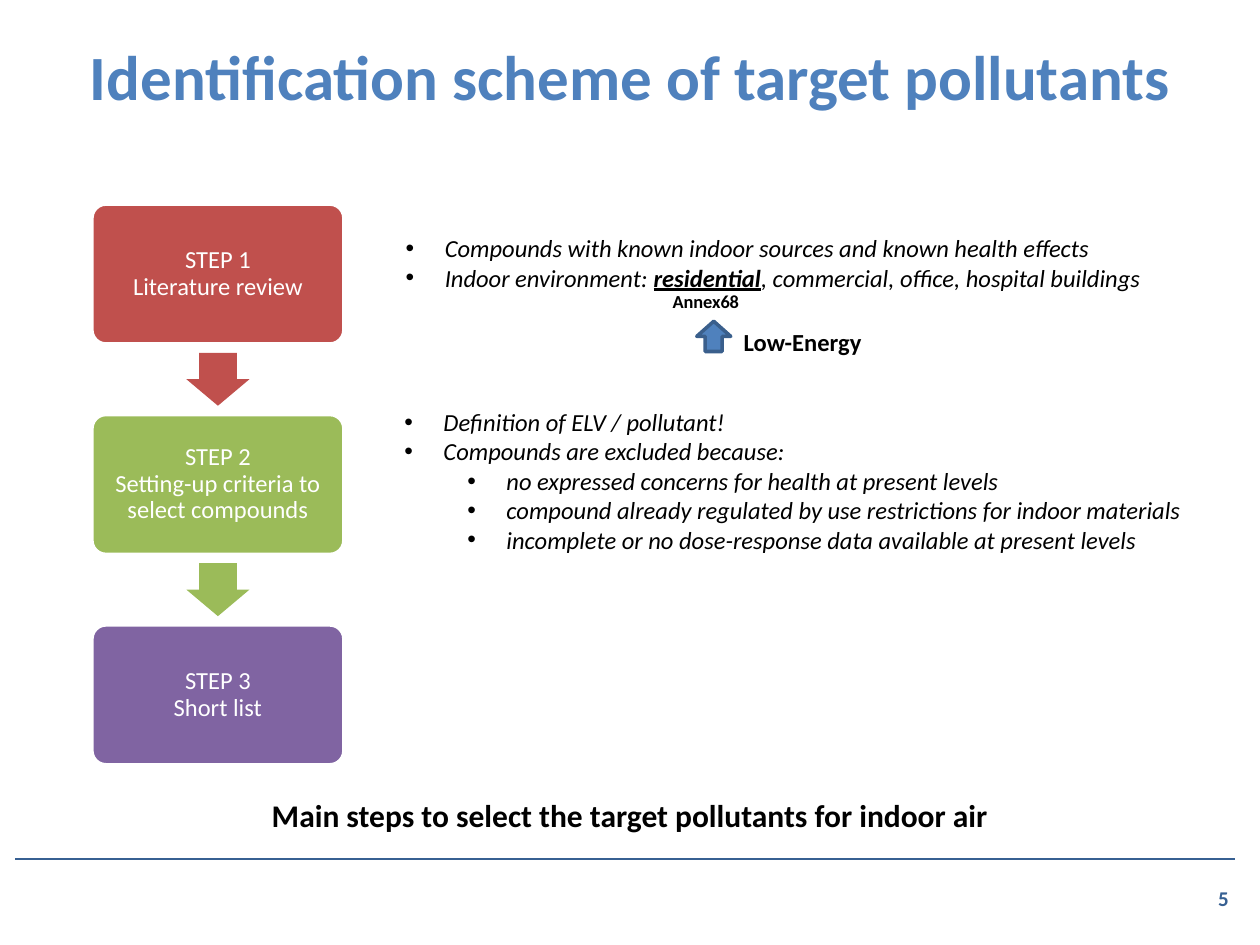
from pptx import Presentation
from pptx.dml.color import RGBColor
from pptx.enum.shapes import MSO_CONNECTOR as Connector, MSO_SHAPE as Preset
from pptx.enum.text import MSO_ANCHOR as Anchor, MSO_AUTO_SIZE as AutoSize, PP_ALIGN as Align
from pptx.oxml.xmlchemy import OxmlElement
from pptx.util import Inches, Pt

FONT = "Calibri"
BLUE, NAVY, BLACK, WHITE = "4F81BD", "376092", "000000", "FFFFFF"
STEPS = [
    ("STEP 1\vLiterature review", "C0504D"),
    ("STEP 2\vSetting-up criteria to select compounds", "9BBB59"),
    ("STEP 3\vShort list", "8064A2"),
]
# Each item is (level, list of (text, emphasised))
REVIEW_ITEMS = [
    (0, [("Compounds with known indoor sources and known health effects", False)]),
    (0, [("Indoor environment: ", False), ("residential", True),
         (", commercial, office, hospital buildings", False)]),
]
CRITERIA_ITEMS = [
    (0, [("Definition of ELV / pollutant!", False)]),
    (0, [("Compounds are excluded because:", False)]),
    (1, [("no expressed concerns for health at present levels", False)]),
    (1, [("compound already regulated by use restrictions for indoor materials", False)]),
    (1, [("incomplete or no dose-response data available at present levels", False)]),
]


def color(hex_string):
    return RGBColor.from_string(hex_string)


def format_run(run, size, hex_string, bold=False, italic=False):
    font = run.font
    font.name, font.size, font.bold, font.italic = FONT, Pt(size), bold, italic
    font.color.rgb = color(hex_string)


def place(shape, left, top, width, height):
    shape.left, shape.top = Inches(left), Inches(top)
    shape.width, shape.height = Inches(width), Inches(height)


def set_text(shape, text, size, hex_string, bold=False, align=Align.CENTER, anchor=Anchor.TOP):
    frame = shape.text_frame
    frame.word_wrap = True
    frame.auto_size = AutoSize.NONE
    frame.vertical_anchor = anchor
    frame.text = text
    for paragraph in frame.paragraphs:
        paragraph.alignment = align
        for run in paragraph.runs:
            format_run(run, size, hex_string, bold)


def add_label(slide, box, text, size, hex_string=BLACK, **options):
    label = slide.shapes.add_textbox(*map(Inches, box))
    set_text(label, text, size, hex_string, bold=True, **options)


def add_preset(slide, preset, box, fill, line=None, adjustments=()):
    shape = slide.shapes.add_shape(preset, *map(Inches, box))
    shape.shadow.inherit = False
    shape.fill.solid()
    shape.fill.fore_color.rgb = color(fill)
    if line:
        shape.line.color.rgb = color(line)
        shape.line.width = Pt(2)
    else:
        shape.line.fill.background()
    for index, value in enumerate(adjustments):
        shape.adjustments[index] = value
    return shape


def set_bullet(paragraph, indent, hanging):
    properties = paragraph._p.get_or_add_pPr()
    properties.set("marL", str(Inches(indent)))
    properties.set("indent", str(-Inches(hanging)))
    for tag, name, value in (("a:buFont", "typeface", "Arial"), ("a:buChar", "char", "•")):
        element = OxmlElement(tag)
        element.set(name, value)
        properties.append(element)


def fill_list(placeholder, box, items):
    place(placeholder, *box)
    frame = placeholder.text_frame
    frame.auto_size = AutoSize.NONE
    for index, (level, parts) in enumerate(items):
        paragraph = frame.add_paragraph() if index else frame.paragraphs[0]
        paragraph.level = level
        paragraph.space_before = Pt(0)
        set_bullet(paragraph, 0.31 + 0.5 * level, 0.31)
        for text, emphasised in parts:
            run = paragraph.add_run()
            run.text = text
            format_run(run, 14, BLACK, bold=emphasised, italic=True)
            run.font.underline = emphasised


def add_steps(slide, left, top, width, height, pitch):
    """Column of step boxes, each joined to the next by a down arrow."""
    arrow_width, arrow_height = 0.5, 0.42
    for index, (text, fill) in enumerate(STEPS):
        step_top = top + index * pitch
        step = add_preset(slide, Preset.ROUNDED_RECTANGLE,
                          (left, step_top, width, height), fill, WHITE, [0.1])
        set_text(step, text, 14, WHITE, anchor=Anchor.MIDDLE)
        step.text_frame.paragraphs[0].line_spacing = 0.9
        if index < len(STEPS) - 1:
            gap_middle = step_top + (height + pitch) / 2
            add_preset(slide, Preset.DOWN_ARROW,
                       (left + (width - arrow_width) / 2, gap_middle - arrow_height / 2,
                        arrow_width, arrow_height), fill, adjustments=[0.6, 0.5])


def add_annex_note(slide, left, top):
    """Remark below the word 'residential'."""
    add_label(slide, (left, top, 0.74, 0.28), "Annex68", 10.5, align=Align.LEFT)
    add_preset(slide, Preset.UP_ARROW, (left + 0.29, top + 0.3, 0.27, 0.24), BLUE, "3A5F8C")
    add_label(slide, (left + 0.42, top + 0.3, 1.42, 0.34), "Low-Energy", 14)


def add_footer(slide, left, top, width):
    rule = slide.shapes.add_connector(Connector.STRAIGHT, Inches(left), Inches(top),
                                      Inches(left + width), Inches(top))
    rule.line.color.rgb = color(NAVY)
    rule.line.width = Pt(1)
    rule._element.spPr.append(OxmlElement("a:effectLst"))
    add_label(slide, (9.57, top + 0.11, 0.43, 0.4), "5", 12, NAVY,
              align=Align.LEFT, anchor=Anchor.MIDDLE)


def main():
    presentation = Presentation()
    presentation.slide_width, presentation.slide_height = Inches(10), Inches(7.5)
    two_content = presentation.slide_layouts[3]
    slide = presentation.slides.add_slide(two_content)

    # Title
    title, review, criteria = slide.placeholders
    place(title, 0.5, -0.03, 9, 1.25)
    set_text(title, "Identification scheme of target pollutants", 36, BLUE,
             bold=True, anchor=Anchor.MIDDLE)

    # Steps and their explanations
    add_steps(slide, 0.73, 1.62, 2, 1.11, pitch=1.67)
    fill_list(review, (3.12, 1.8, 6.15, 0.81), REVIEW_ITEMS)
    fill_list(criteria, (3.11, 3.18, 6.45, 1.28), CRITERIA_ITEMS)
    add_annex_note(slide, 5.24, 2.25)

    # Caption and footer
    add_label(slide, (1.93, 6.27, 6.14, 0.4),
              "Main steps to select the target pollutants for indoor air", 18)
    add_footer(slide, 0.12, 6.82, 9.68)

    presentation.save("out.pptx")


if __name__ == "__main__":
    main()
